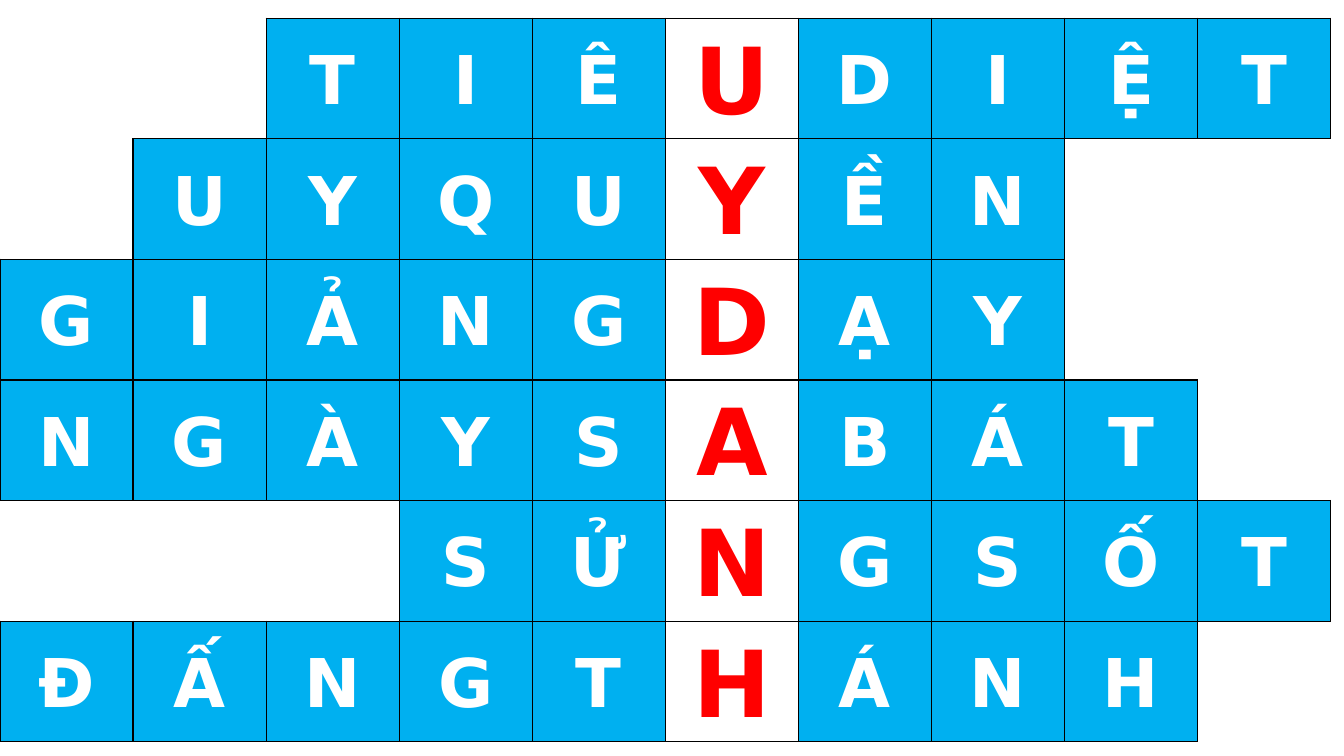
from lxml import etree
from pptx import Presentation
from pptx.dml.color import RGBColor
from pptx.enum.text import MSO_ANCHOR, PP_ALIGN
from pptx.oxml.ns import qn
from pptx.util import Inches, Pt

COLORS = {"tile": "00B0F0", "key": "FFFFFF", "letter": "FFFFFF",
          "key_letter": "FF0000", "border": "000000"}

# A dot marks a square outside the crossword
WORDS = ["..TIÊUDIỆT",
         ".UYQUYỀN..",
         "GIẢNGDẠY..",
         "NGÀYSABÁT.",
         "...SỬNGSỐT",
         "ĐẤNGTHÁNH."]
ROWS, COLS, KEY_COL = len(WORDS), len(WORDS[0]), 5
SIDES = {"a:lnL": (0, -1), "a:lnR": (0, 1), "a:lnT": (-1, 0), "a:lnB": (1, 0)}


def has_letter(row, col):
    return 0 <= row < ROWS and 0 <= col < COLS and WORDS[row][col] != "."


def add_border(cell, side, visible):
    ln = etree.SubElement(cell._tc.get_or_add_tcPr(), qn(side), w=str(Pt(1)))
    if visible:
        fill = etree.SubElement(ln, qn("a:solidFill"))
        etree.SubElement(fill, qn("a:srgbClr"), val=COLORS["border"])
    else:
        etree.SubElement(ln, qn("a:noFill"))


prs = Presentation()
prs.slide_width, prs.slide_height = Inches(13.33), Inches(7.5)
slide = prs.slides.add_slide(prs.slide_layouts[6])

# Crossword grid
table = slide.shapes.add_table(ROWS, COLS, 0, Inches(0.18),
                               Inches(13.2), Inches(7.18)).table
table.first_row = table.horz_banding = False

for row, word in enumerate(WORDS):
    for col, letter in enumerate(word):
        cell = table.cell(row, col)

        # An edge shows when a letter stands on either side of it
        for side, (down, right) in SIDES.items():
            add_border(cell, side, has_letter(row, col)
                       or has_letter(row + down, col + right))
        if letter == ".":
            cell.fill.background()
            continue

        # Letter square, with the key word in its own column
        is_key = col == KEY_COL
        cell.fill.solid()
        cell.fill.fore_color.rgb = RGBColor.from_string(
            COLORS["key" if is_key else "tile"])
        cell.vertical_anchor = MSO_ANCHOR.MIDDLE
        cell.margin_left = cell.margin_right = Inches(0.07)
        cell.margin_top = cell.margin_bottom = 0
        p = cell.text_frame.paragraphs[0]
        p.text = letter
        p.alignment = PP_ALIGN.CENTER
        p.line_spacing = 1.07
        p.space_after = Pt(8)
        p.font.name = "DejaVu Sans"
        p.font.bold = True
        p.font.size = Pt(66 if is_key else 48)
        p.font.color.rgb = RGBColor.from_string(
            COLORS["key_letter" if is_key else "letter"])

prs.save("out.pptx")
